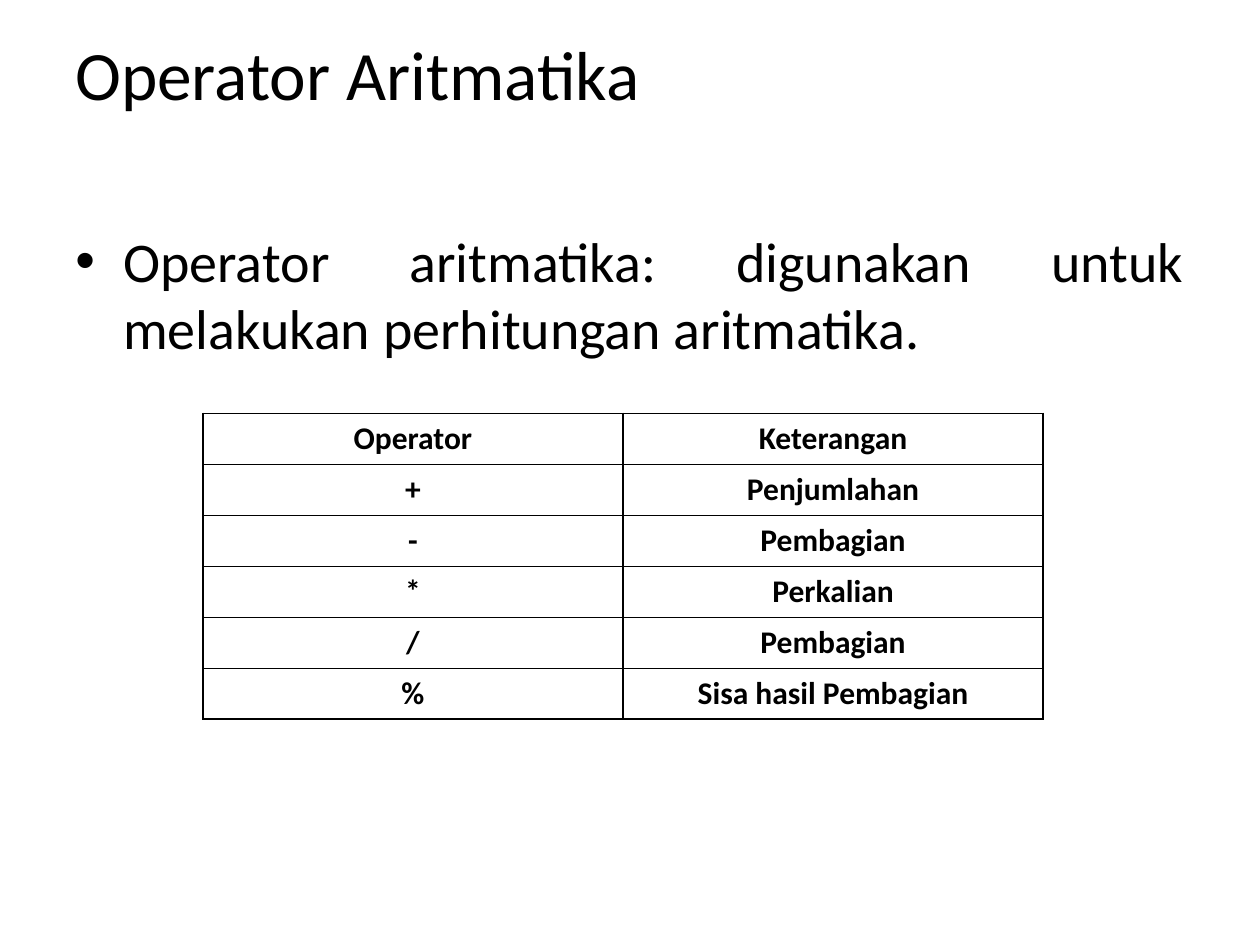
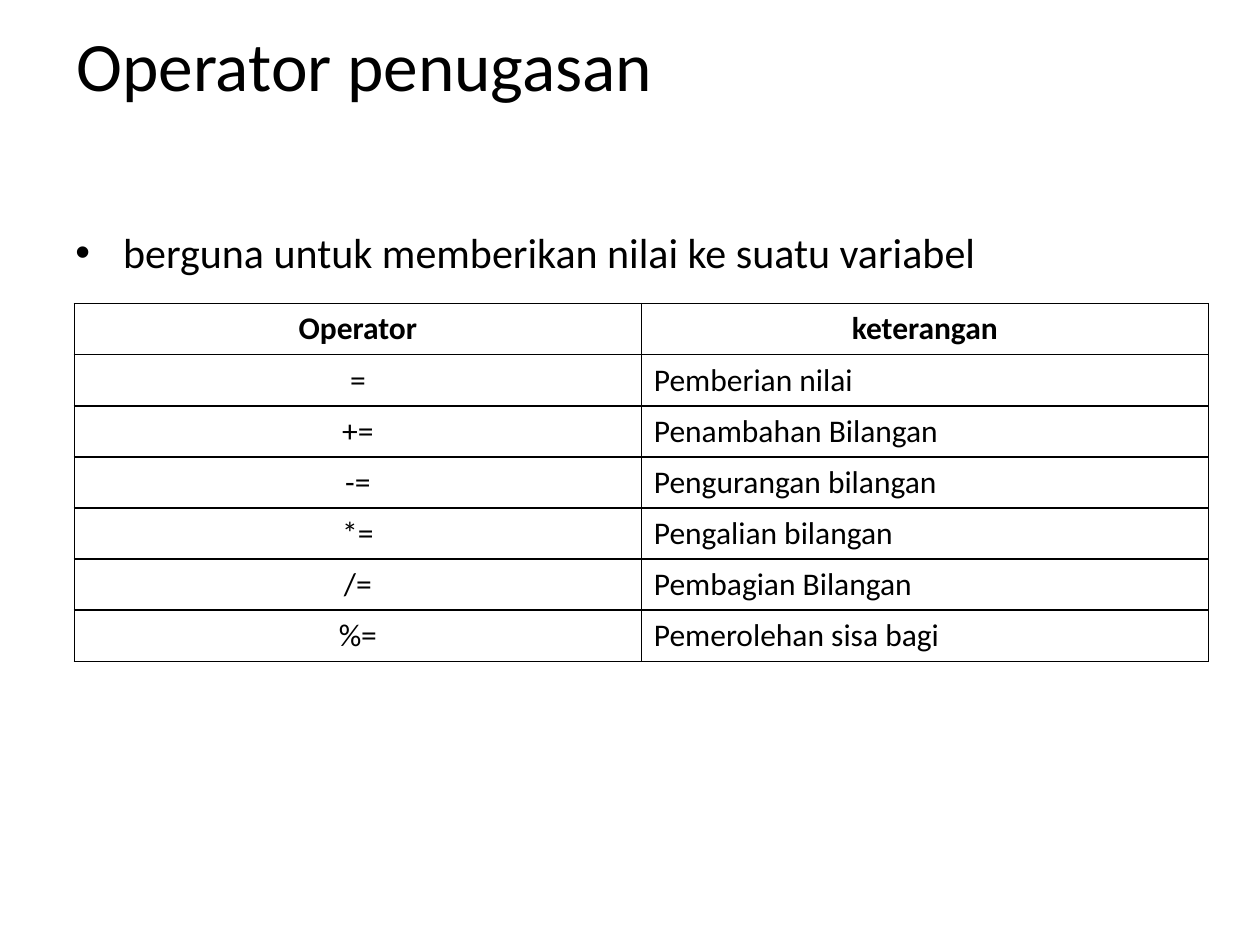
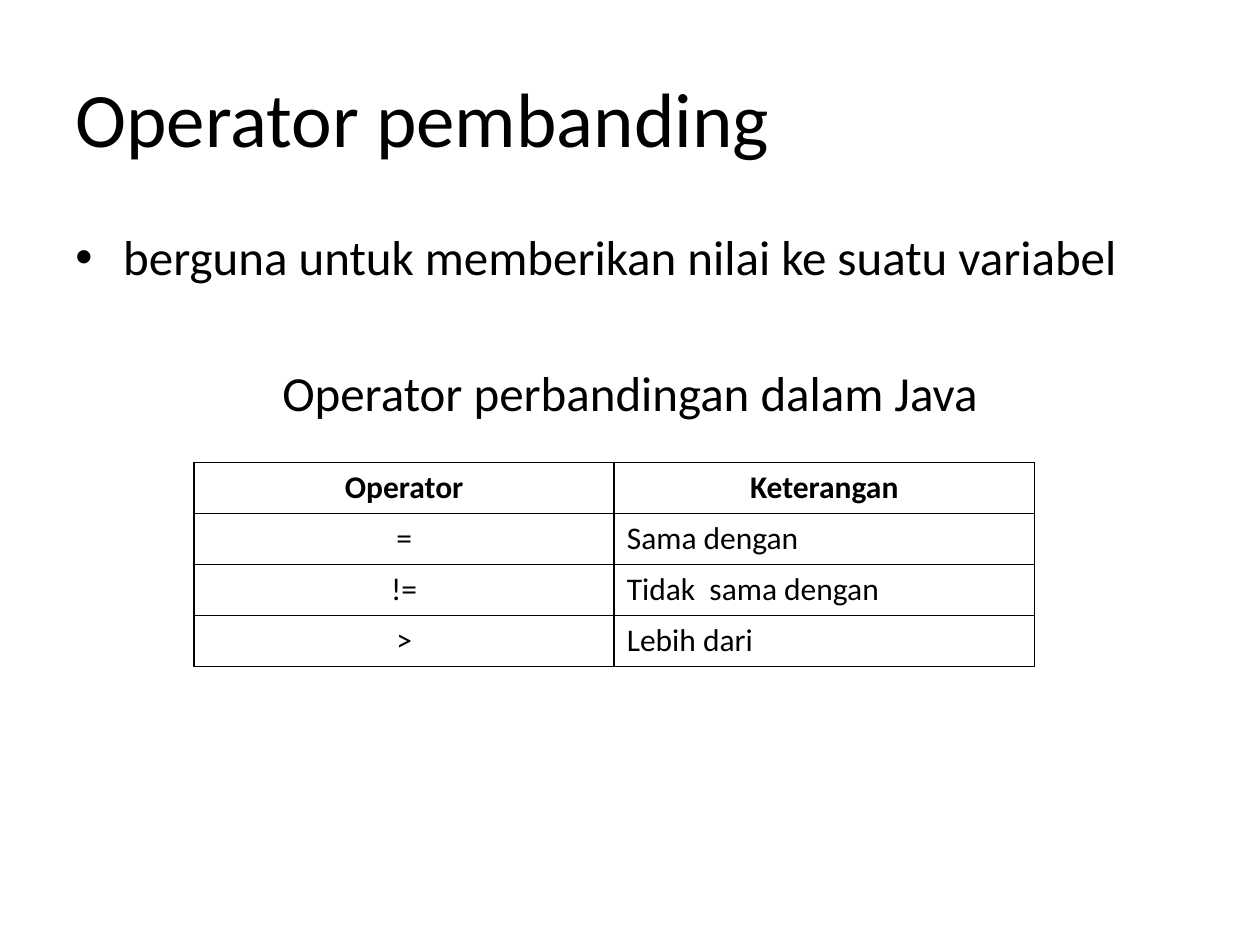
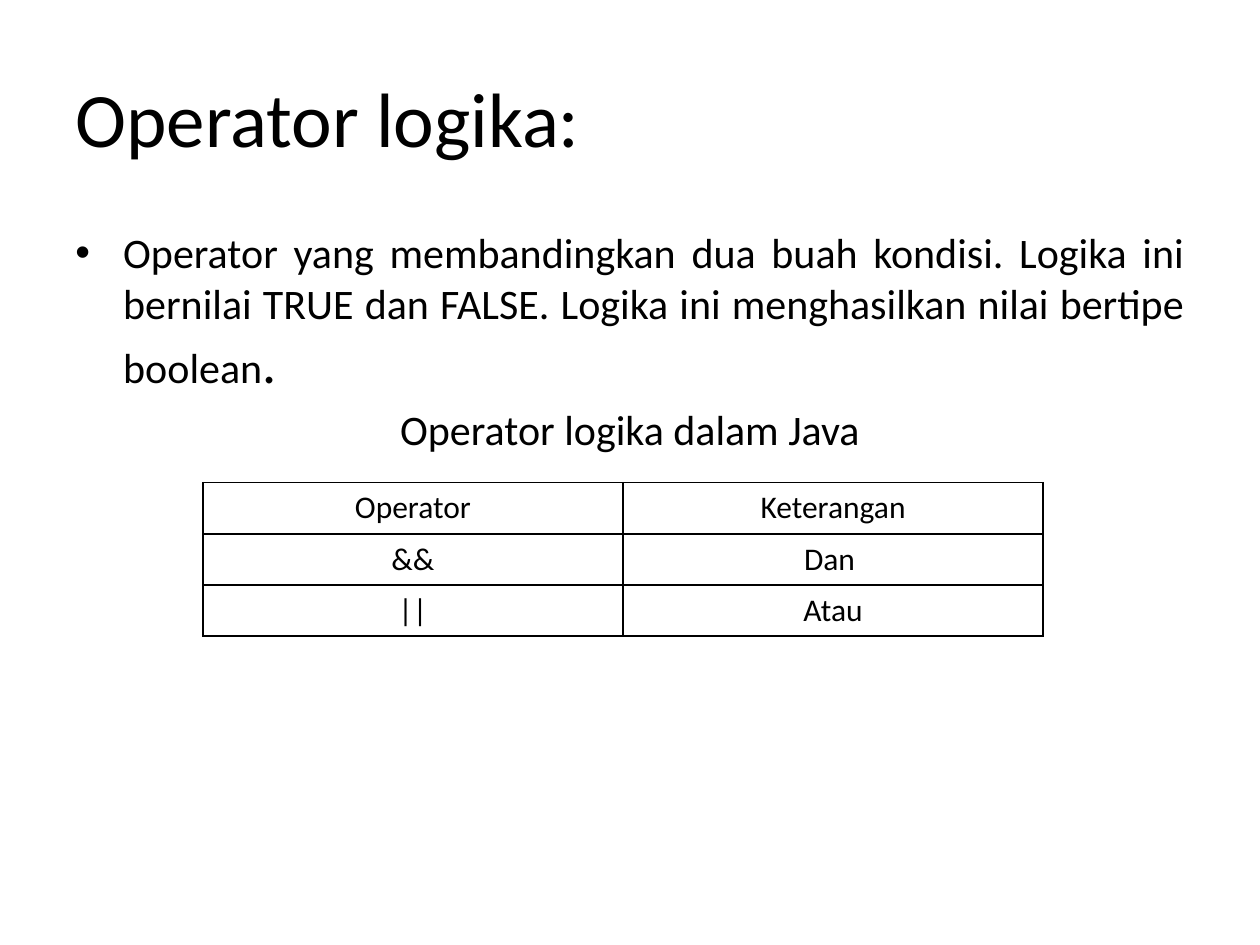
from pptx import Presentation
from pptx.dml.color import RGBColor
from pptx.enum.text import MSO_ANCHOR, PP_ALIGN
from pptx.oxml.ns import qn
from pptx.util import Inches, Pt
from lxml.etree import SubElement

# Shared look
COLORS = {"ink": "000000", "back": "FFFFFF"}
FONT = "Calibri"
LEFT, WIDTH = 0.5, 9
INDENT = 0.38
CENTER, JUSTIFY = PP_ALIGN.CENTER, PP_ALIGN.JUSTIFY


def write(par, text, size=18, bold=False, align=None):
    """Add a formatted run to a paragraph."""
    if align is not None:
        par.alignment = align
    run = par.add_run()
    run.text = text
    font = run.font
    font.name, font.size, font.bold = FONT, Pt(size), bold
    font.color.rgb = RGBColor.from_string(COLORS["ink"])


def add_box(slide, x, y, w, h, anchor=MSO_ANCHOR.TOP):
    frame = slide.shapes.add_textbox(*map(Inches, (x, y, w, h))).text_frame
    frame.word_wrap = True
    frame.vertical_anchor = anchor
    return frame


def add_title(slide, text, size=44, x=LEFT, y=0.3, h=1.25, high=False):
    """Title in the middle of its box, or flush with the top when high."""
    anchor = MSO_ANCHOR.TOP if high else MSO_ANCHOR.MIDDLE
    frame = add_box(slide, x, y, WIDTH, h, anchor)
    if high:
        frame.margin_top = 0
    write(frame.paragraphs[0], text, size=size)


def add_bullet(par):
    props = par._p.get_or_add_pPr()
    props.set("marL", str(Inches(INDENT)))
    props.set("indent", str(Inches(-INDENT)))
    SubElement(props, qn("a:buFont"), typeface="Arial")
    SubElement(props, qn("a:buChar"), char="•")


def add_body(slide, text, size, align=None, end=None, note=None, gap=5):
    """Bulleted text, with an optional larger ending and a centred caption."""
    frame = add_box(slide, LEFT, 1.75, WIDTH, 4.95)
    par = frame.paragraphs[0]
    add_bullet(par)
    write(par, text, size=size, align=align)
    if end:
        write(par, end, size=32)
    if note:
        par = frame.add_paragraph()
        par.space_before = Pt(gap)
        write(par, note, size=size, align=CENTER)


def add_edges(cell):
    props = cell._tc.get_or_add_tcPr()
    for at, side in enumerate(("lnL", "lnR", "lnT", "lnB")):
        line = props.makeelement(qn(f"a:{side}"), {"w": str(Pt(1))})
        fill = SubElement(line, qn("a:solidFill"))
        SubElement(fill, qn("a:srgbClr"), val=COLORS["ink"])
        props.insert(at, line)


def add_grid(slide, rows, x, y, w, h, heads=True, bold=False, align=None):
    """Two equal columns; align sets the second one below the heading."""
    size = len(rows), len(rows[0])
    table = slide.shapes.add_table(*size, *map(Inches, (x, y, w, h))).table
    table.first_row = table.horz_banding = False
    for row in table.rows:
        row.height = Inches(h / len(rows))
    for r, row in enumerate(rows):
        for c, text in enumerate(row):
            cell = table.cell(r, c)
            cell.fill.background()
            add_edges(cell)
            write(cell.text_frame.paragraphs[0], text,
                  bold=bold or (heads and r == 0),
                  align=CENTER if r == 0 or c == 0 else align)


def main():
    deck = Presentation()
    deck.slide_width, deck.slide_height = Inches(10), Inches(7.5)

    def add_slide():
        slide = deck.slides.add_slide(deck.slide_layouts[6])
        fill = slide.background.fill
        fill.solid()
        fill.fore_color.rgb = RGBColor.from_string(COLORS["back"])
        return slide

    # Arithmetic
    slide = add_slide()
    add_title(slide, "Operator Aritmatika", size=39.6, y=0.25, high=True)
    add_body(slide, "Operator aritmatika: digunakan untuk melakukan "
             "perhitungan aritmatika. ", 32, align=JUSTIFY)
    add_grid(slide, [("Operator", "Keterangan"),
                     ("+", "Penjumlahan"),
                     ("-", "Pembagian"),
                     ("*", "Perkalian"),
                     ("/", "Pembagian"),
                     ("%", "Sisa hasil Pembagian")],
             1.61, 3.28, 6.67, 2.43, bold=True, align=CENTER)

    # Assignment
    slide = add_slide()
    add_title(slide, "Operator penugasan", size=39.6,
              x=0.51, y=0.18, h=0.93, high=True)
    usage = "berguna untuk memberikan nilai ke suatu variabel"
    add_body(slide, usage, 24)
    add_grid(slide, [("Operator", "keterangan"),
                     ("=", "Pemberian nilai"),
                     ("+=", "Penambahan Bilangan"),
                     ("-=", "Pengurangan bilangan"),
                     ("*=", "Pengalian bilangan"),
                     ("/=", "Pembagian Bilangan"),
                     ("%=", "Pemerolehan sisa bagi")],
             0.59, 2.41, 9, 2.84)

    # Comparison
    slide = add_slide()
    add_title(slide, "Operator pembanding")
    add_body(slide, usage, 28, note="Operator perbandingan dalam Java", gap=44)
    add_grid(slide, [("Operator", "Keterangan"),
                     ("=", "Sama dengan"),
                     ("!=", "Tidak  sama dengan"),
                     (">", "Lebih dari")],
             1.54, 3.67, 6.67, 1.62)

    # Logic
    slide = add_slide()
    add_title(slide, "Operator logika:")
    add_body(slide, "Operator yang membandingkan dua buah kondisi. Logika ini "
             "bernilai TRUE dan FALSE. Logika ini menghasilkan nilai bertipe "
             "boolean", 24, align=JUSTIFY, end=".",
             note="Operator logika dalam Java")
    add_grid(slide, [("Operator", "Keterangan"),
                     ("&&", "Dan "),
                     ("||", "Atau")],
             1.61, 3.83, 6.67, 1.22, heads=False, align=CENTER)

    deck.save("out.pptx")


if __name__ == "__main__":
    main()
